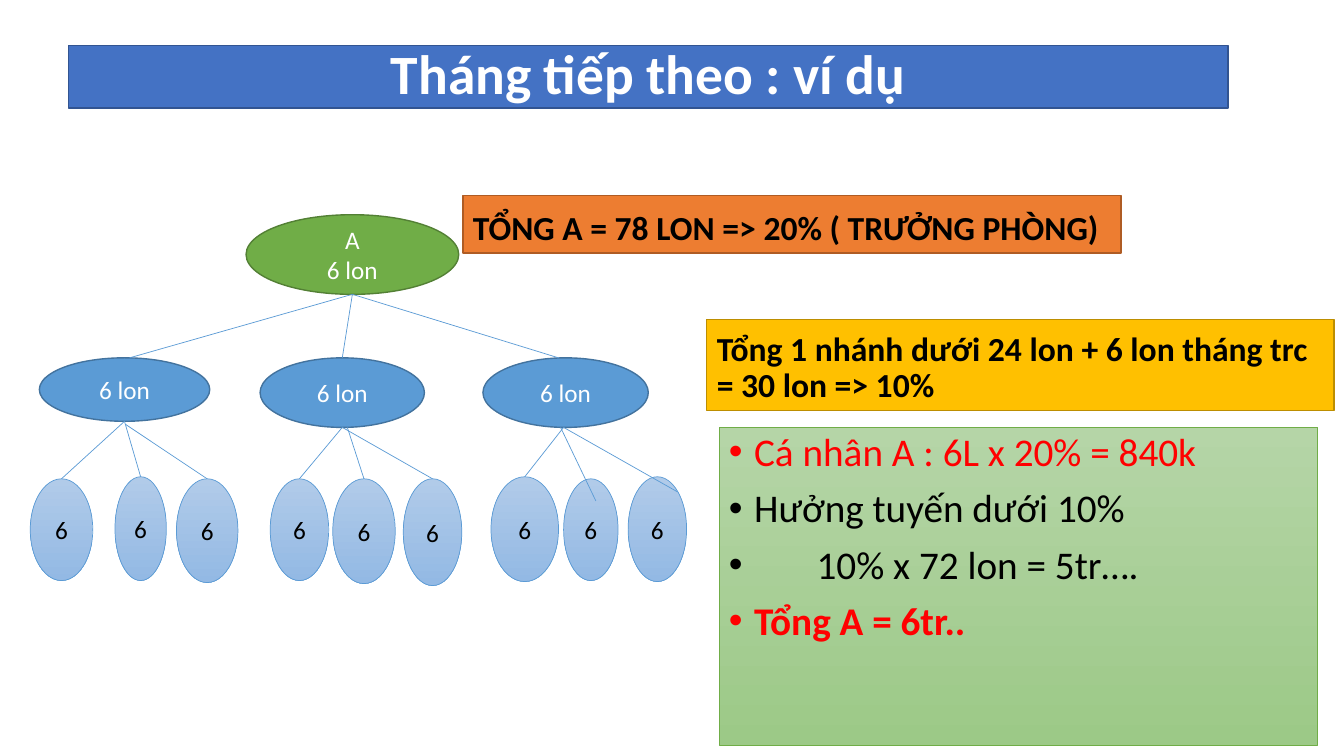
from dataclasses import dataclass

from lxml import etree
from pptx import Presentation
from pptx.dml.color import RGBColor
from pptx.enum.shapes import MSO_CONNECTOR, MSO_SHAPE
from pptx.enum.text import MSO_ANCHOR, MSO_AUTO_SIZE, PP_ALIGN
from pptx.oxml.ns import qn
from pptx.util import Inches, Pt

OVAL, STRAIGHT = MSO_SHAPE.OVAL, MSO_CONNECTOR.STRAIGHT
CENTER, LEFT = PP_ALIGN.CENTER, PP_ALIGN.LEFT
MIDDLE, BOTTOM, TOP = MSO_ANCHOR.MIDDLE, MSO_ANCHOR.BOTTOM, MSO_ANCHOR.TOP


@dataclass(frozen=True)
class Theme:
    font: str = "Calibri"
    title_size: float = 39.6
    heading_size: float = 24
    list_size: float = 28
    node_size: float = 18
    white: str = "FFFFFF"
    black: str = "000000"
    red: str = "FF0000"
    link: str = "5B9BD5"
    title: tuple = ("4472C4", "325491", 1)
    branch_total: tuple = ("FFC000", "BD8E00", 1)
    grand_total: tuple = ("ED7D31", "AF5C24", 1)
    income: tuple = (("B5D5A7", "9CC987"), "70AD47", 0.5)
    root: tuple = ("70AD47", "538035", 1)
    branch: tuple = ("5B9BD5", "43739E", 1)
    leaf: tuple = (("B1CBE9", "93B9E4"), "5B9BD5", 0.5)


THEME = Theme()
COLUMNS, ROWS = 1333, 750
CELL = Inches(0.01)

TITLE = ("Tháng tiếp theo : ví dụ", (68, 45, 1150, 62))
BRANCH_TOTAL = ("Tổng 1 nhánh dưới 24 lon + 6 lon tháng trc = 30 lon => 10%",
                (701, 317, 622, 90))
GRAND_TOTAL = ("TỔNG A = 78 LON => 20% ( TRƯỞNG PHÒNG)", (459, 194, 653, 57))
INCOME_BOX = (713, 424, 594, 315)
INCOME = [
    ("Cá nhân A : 6L x 20% = 840k", THEME.red, False, 25),
    ("Hưởng tuyến dưới 10%", THEME.black, False, 25),
    ("10% x 72 lon = 5tr….", THEME.black, False, 87),
    ("Tổng A = 6tr..", THEME.red, True, 25),
]
ROOT = (["A", "6 lon"], (244, 213, 211, 79))
BRANCH_TEXT, LEAF_TEXT = ["6 lon"], ["6"]
BRANCHES = [
    ((39, 355, 169, 63), [(30, 475, 62, 101), (114, 473, 51, 103), (175, 475, 61, 103)]),
    ((258, 355, 163, 69), [(268, 475, 58, 101), (330, 475, 62, 104), (400, 475, 58, 106)]),
    ((479, 355, 164, 69), [(487, 473, 67, 104), (559, 475, 54, 101), (623, 473, 58, 104)]),
]
BRANCH_LINK_SHIFTS = [5, 0, -7]
LEAF_LINK_SHIFTS = {
    (0, 2): ((1, 3), (0, 0)),
    (1, 1): ((5, 0), (0, 0)),
    (2, 0): ((-2, 0), (0, 0)),
    (2, 1): ((-5, 0), (5, 22)),
    (2, 2): ((-2, 0), (20, 15)),
}


def rgb(color):
    return RGBColor.from_string(color)


def place(shape, box):
    shape.left, shape.top, shape.width, shape.height = (round(n * CELL) for n in box)


def paint(shape, style):
    fill, line, weight = style
    if isinstance(fill, tuple):
        shape.fill.gradient()
        shape.fill.gradient_angle = 270
        for stop, color in zip(shape.fill.gradient_stops, fill):
            stop.color.rgb = rgb(color)
    else:
        shape.fill.solid()
        shape.fill.fore_color.rgb = rgb(fill)
    shape.line.color.rgb = rgb(line)
    shape.line.width = Pt(weight)


def write(shape, lines, size, color, bold, align, anchor):
    frame = shape.text_frame
    frame.text = "\n".join(lines)
    frame.word_wrap = True
    frame.auto_size = MSO_AUTO_SIZE.NONE
    frame.vertical_anchor = anchor
    for paragraph in frame.paragraphs:
        paragraph.alignment = align
        font = paragraph.font
        font.name, font.size, font.bold = THEME.font, Pt(size), bold
        font.color.rgb = rgb(color)
    return frame.paragraphs


def set_spacing(paragraphs, before):
    for paragraph in paragraphs:
        paragraph.line_spacing = 0.9
        paragraph.space_before = Pt(before)


def add_bullet(paragraph, indent):
    properties = paragraph._p.get_or_add_pPr()
    properties.set("marL", str(indent * CELL))
    properties.set("indent", str(-indent * CELL))
    bullet_font = etree.Element(qn("a:buFont"), typeface="Arial")
    bullet = etree.Element(qn("a:buChar"), char="•")
    run_defaults = properties.find(qn("a:defRPr"))
    run_defaults.addprevious(bullet_font)
    run_defaults.addprevious(bullet)


def fill_banner(shape, content, style, size, color, align, anchor, before):
    text, box = content
    place(shape, box)
    paint(shape, style)
    set_spacing(write(shape, [text], size, color, True, align, anchor), before)


def fill_income(shape):
    place(shape, INCOME_BOX)
    paint(shape, THEME.income)
    paragraphs = write(shape, [item[0] for item in INCOME], THEME.list_size,
                       THEME.black, False, LEFT, TOP)
    set_spacing(paragraphs, 10)
    for paragraph, (_, color, bold, indent) in zip(paragraphs, INCOME):
        paragraph.font.color.rgb = rgb(color)
        paragraph.font.bold = bold
        add_bullet(paragraph, indent)


def add_node(slide, lines, box, style, color):
    node = slide.shapes.add_shape(OVAL, *(n * CELL for n in box))
    node.shadow.inherit = False
    paint(node, style)
    write(node, lines, THEME.node_size, color, False, CENTER, MIDDLE)


def add_link(slide, parent, child, start_shift=(0, 0), end_shift=(0, 0)):
    start = (parent[0] + parent[2] / 2 + start_shift[0], parent[1] + parent[3] + start_shift[1])
    end = (child[0] + child[2] / 2 + end_shift[0], child[1] + end_shift[1])
    link = slide.shapes.add_connector(STRAIGHT, *(round(n * CELL) for n in start + end))
    link.line.color.rgb = rgb(THEME.link)
    link.line.width = Pt(0.5)
    etree.SubElement(link._element.spPr, qn("a:effectLst"))


def add_tree(slide):
    root_text, root_box = ROOT
    add_node(slide, root_text, root_box, THEME.root, THEME.white)
    for branch, _ in BRANCHES:
        add_node(slide, BRANCH_TEXT, branch, THEME.branch, THEME.white)
    for _, leaves in BRANCHES:
        for leaf in leaves:
            add_node(slide, LEAF_TEXT, leaf, THEME.leaf, THEME.black)
    for row, (branch, leaves) in enumerate(BRANCHES):
        add_link(slide, root_box, branch, end_shift=(BRANCH_LINK_SHIFTS[row], 0))
        for position, leaf in enumerate(leaves):
            add_link(slide, branch, leaf, *LEAF_LINK_SHIFTS.get((row, position), ()))


def main():
    deck = Presentation()
    deck.slide_width, deck.slide_height = COLUMNS * CELL, ROWS * CELL
    slide = deck.slides.add_slide(deck.slide_layouts.get_by_name("Comparison"))
    title, branch_total, income, grand_total, spare = slide.placeholders
    fill_banner(title, TITLE, THEME.title, THEME.title_size, THEME.white, CENTER, MIDDLE, 0)
    for shape, content, style in (
        (branch_total, BRANCH_TOTAL, THEME.branch_total),
        (grand_total, GRAND_TOTAL, THEME.grand_total),
    ):
        fill_banner(shape, content, style, THEME.heading_size, THEME.black, LEFT, BOTTOM, 10)
    fill_income(income)
    spare._element.getparent().remove(spare._element)
    add_tree(slide)
    deck.save("out.pptx")


if __name__ == "__main__":
    main()
